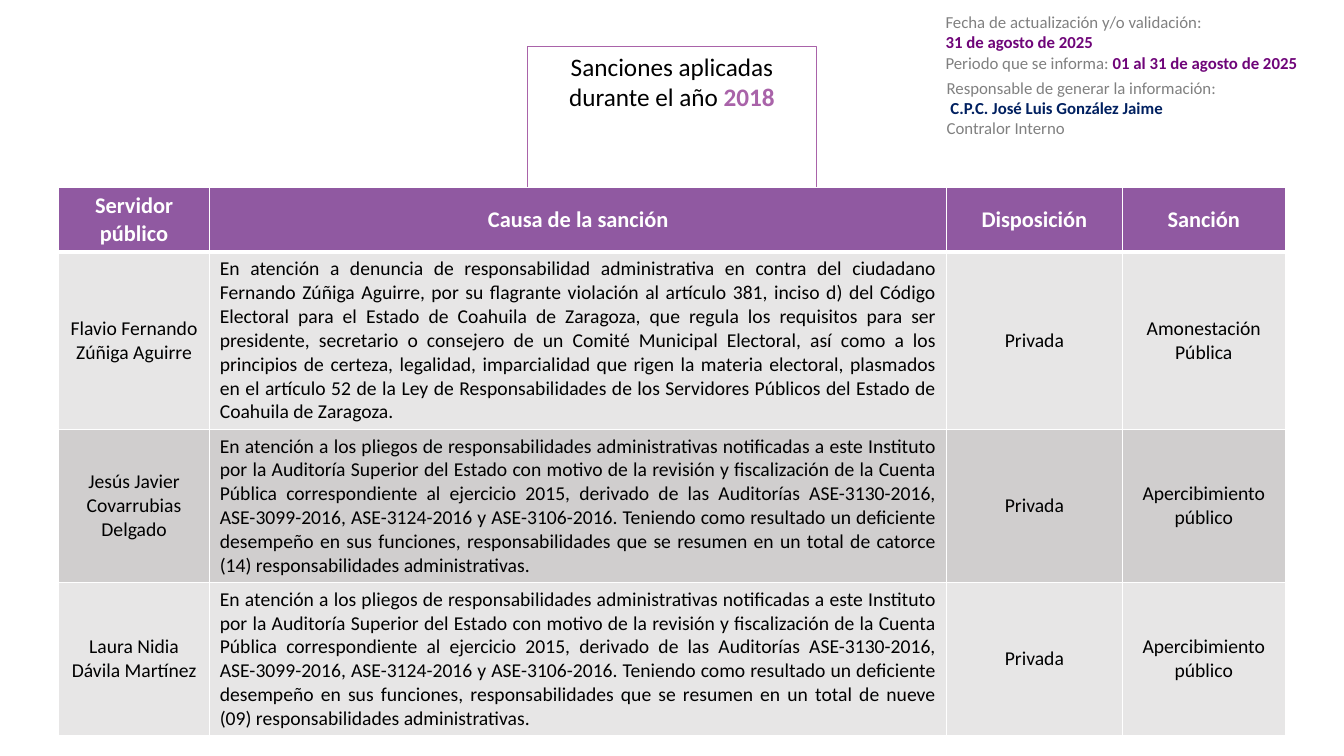
from lxml import etree
from pptx import Presentation
from pptx import util as u
from pptx.dml import color
from pptx.enum import text
from pptx.oxml import ns

Inches = u.Inches
FONT = "Calibri"
COLORS = {
    "white": "FFFFFF", "black": "000000", "grey": "808080", "navy": "002060",
    "plum": "6F0579", "mauve": "A963A9", "header": "9059A1",
    "light": "E7E6E6", "dark": "D0CECE",
}
ALIGN = text.PP_ALIGN
COLUMN_WIDTHS = [1.5, 7.31, 1.74, 1.62]
ROW_HEIGHTS = [0.64, 1.76, 1.52, 1.52]
CAUSE_COLUMN = 1

AUDIT_CAUSE = (
    "En atención a los pliegos de responsabilidades administrativas notificadas a este "
    "Instituto por la Auditoría Superior del Estado con motivo de la revisión y "
    "fiscalización de la Cuenta Pública correspondiente al ejercicio 2015, derivado de las "
    "Auditorías ASE-3130-2016, ASE-3099-2016, ASE-3124-2016 y ASE-3106-2016. Teniendo como "
    "resultado un deficiente desempeño en sus funciones, responsabilidades que se resumen "
    "en un total de {} responsabilidades administrativas."
)
COMPLAINT_CAUSE = (
    "En atención a denuncia de responsabilidad administrativa en contra del ciudadano "
    "Fernando Zúñiga Aguirre, por su flagrante violación al artículo 381, inciso d) del "
    "Código Electoral para el Estado de Coahuila de Zaragoza, que regula los requisitos "
    "para ser presidente, secretario o consejero de un Comité Municipal Electoral, así como "
    "a los principios de certeza, legalidad, imparcialidad que rigen la materia electoral, "
    "plasmados en el artículo 52 de la Ley de Responsabilidades de los Servidores Públicos "
    "del Estado de Coahuila de Zaragoza."
)
SANCTIONS = [
    ["Servidor público", "Causa de la sanción", "Disposición", "Sanción"],
    ["Flavio Fernando Zúñiga Aguirre", COMPLAINT_CAUSE, "Privada", "Amonestación Pública"],
    ["Jesús Javier Covarrubias Delgado", AUDIT_CAUSE.format("catorce (14)"),
     "Privada", "Apercibimiento público"],
    ["Laura Nidia Dávila Martínez", AUDIT_CAUSE.format("nueve (09)"),
     "Privada", "Apercibimiento público"],
]


def rgb(name):
    return color.RGBColor.from_string(COLORS[name])


def add_run(paragraph, words, size, color_name, bold=False):
    run = paragraph.add_run()
    run.text = words
    run.font.name = FONT
    run.font.size = u.Pt(size)
    run.font.bold = bold
    run.font.color.rgb = rgb(color_name)


def format_title(slide):
    title = slide.shapes.title
    title.left, title.top = Inches(5.23), Inches(0.46)
    title.width, title.height = Inches(2.87), Inches(0.71)
    title.fill.solid()
    title.fill.fore_color.rgb = rgb("white")
    title.line.color.rgb = rgb("mauve")
    title.line.width = u.Pt(1)
    frame = title.text_frame
    frame.word_wrap = True
    frame.auto_size = text.MSO_AUTO_SIZE.SHAPE_TO_FIT_TEXT
    frame.vertical_anchor = text.MSO_ANCHOR.TOP
    paragraph = frame.paragraphs[0]
    paragraph.alignment = ALIGN.CENTER
    paragraph.line_spacing = 1.0
    add_run(paragraph, "Sanciones aplicadas durante el año ", 18, "black")
    add_run(paragraph, "2018", 18, "mauve", True)


def add_note(slide, left, top, width, height, lines, wrap):
    """Each line is a list of (words, color name, bold) runs."""
    box = slide.shapes.add_textbox(Inches(left), Inches(top), Inches(width), Inches(height))
    frame = box.text_frame
    frame.word_wrap = wrap
    frame.auto_size = text.MSO_AUTO_SIZE.SHAPE_TO_FIT_TEXT
    for index, runs in enumerate(lines):
        paragraph = frame.add_paragraph() if index else frame.paragraphs[0]
        for words, color_name, bold in runs:
            add_run(paragraph, words, 12, color_name, bold)


def add_border(cell, side, points):
    properties = cell._tc.get_or_add_tcPr()
    line = etree.SubElement(properties, ns.qn(f"a:ln{side}"), w=str(u.Pt(points)))
    fill = etree.SubElement(line, ns.qn("a:solidFill"))
    etree.SubElement(fill, ns.qn("a:srgbClr"), val=COLORS["white"])


def format_cell(cell, words, row, column):
    is_header = row == 0
    # Borders come before the fill in the cell properties
    thick_side = {0: "B", 1: "T"}.get(row)
    for side in "LRTB":
        if not (is_header and side == "T" and column <= CAUSE_COLUMN):
            add_border(cell, side, 3 if side == thick_side else 1)
    cell.fill.solid()
    cell.fill.fore_color.rgb = rgb("header" if is_header else "light" if row % 2 else "dark")
    cell.vertical_anchor = text.MSO_ANCHOR.MIDDLE
    paragraph = cell.text_frame.paragraphs[0]
    justified = column == CAUSE_COLUMN and not is_header
    paragraph.alignment = ALIGN.JUSTIFY if justified else ALIGN.CENTER
    add_run(paragraph, words, 16 if is_header else 14,
            "white" if is_header else "black", is_header)


def add_sanctions_table(slide):
    frame = slide.shapes.add_table(
        len(ROW_HEIGHTS), len(COLUMN_WIDTHS), Inches(0.58), Inches(1.86),
        Inches(sum(COLUMN_WIDTHS)), Inches(sum(ROW_HEIGHTS)))
    table = frame.table
    for column, width in zip(table.columns, COLUMN_WIDTHS):
        column.width = Inches(width)
    for row, height in zip(table.rows, ROW_HEIGHTS):
        row.height = Inches(height)
    for row, entries in enumerate(SANCTIONS):
        for column, words in enumerate(entries):
            format_cell(table.cell(row, column), words, row, column)


def main():
    presentation = Presentation()
    presentation.slide_width = Inches(13.33)
    presentation.slide_height = Inches(7.5)
    slide = presentation.slides.add_slide(presentation.slide_layouts[5])

    # Table and title
    add_sanctions_table(slide)
    format_title(slide)

    # Update date and person in charge
    add_note(slide, 9.28, 0.07, 3.74, 0.71, [
        [("Fecha de actualización y/o validación:", "grey", False)],
        [("31 de agosto de 2025", "plum", True)],
        [("Periodo que se informa: ", "grey", False),
         ("01 al 31 de agosto de 2025", "plum", True)],
    ], wrap=False)
    add_note(slide, 9.29, 0.72, 3.11, 1.54, [
        [("Responsable de generar la información:", "grey", False)],
        [(" ", "grey", False), ("C.P.C. José Luis González Jaime", "navy", True)],
        [("Contralor Interno", "grey", False)],
    ], wrap=True)

    presentation.save("out.pptx")


if __name__ == "__main__":
    main()
